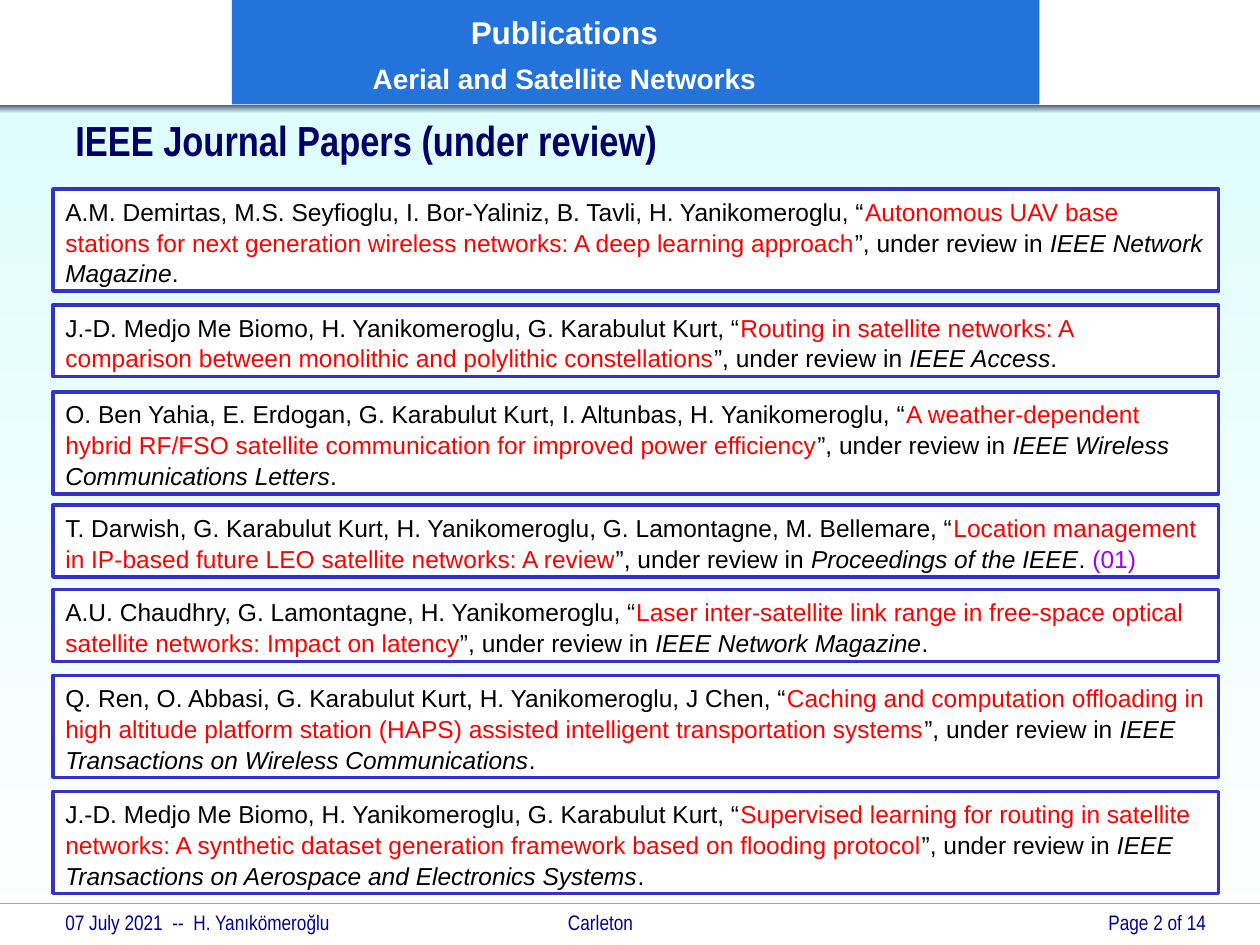
from lxml.etree import SubElement
from pptx import Presentation
from pptx.dml.color import RGBColor
from pptx.enum.shapes import MSO_CONNECTOR, MSO_SHAPE
from pptx.enum.text import MSO_ANCHOR, PP_ALIGN
from pptx.oxml.ns import qn
from pptx.util import Inches, Pt

# Content
HEADER = [("Publications", 18), ("Aerial and Satellite Networks", 16)]
TITLE = "IEEE Journal Papers (under review)"
# left, width, text, alignment
FOOTER = [
    (0.42, 3.5, "07 July 2021  --  H. Yanıkömeroğlu", PP_ALIGN.LEFT),
    (4.41, 2, "Carleton", PP_ALIGN.LEFT),
    (7.5, 2.17, "Page 2 of 14", PP_ALIGN.RIGHT),
]
# top, number of lines, authors, paper title, journal, note
PAPERS = [
    (1.5, 3, "A.M. Demirtas, M.S. Seyfioglu, I. Bor-Yaliniz, B. Tavli, H. Yanikomeroglu",
     "Autonomous UAV base stations for next generation wireless networks: "
     "A deep learning approach", "IEEE Network Magazine", ""),
    (2.42, 2, "J.-D. Medjo Me Biomo, H. Yanikomeroglu, G. Karabulut Kurt",
     "Routing in satellite networks: A comparison between monolithic and "
     "polylithic constellations", "IEEE Access", ""),
    (3.11, 3, "O. Ben Yahia, E. Erdogan, G. Karabulut Kurt, I. Altunbas, H. Yanikomeroglu",
     "A weather-dependent hybrid RF/FSO satellite communication for improved "
     "power efficiency", "IEEE Wireless Communications Letters", ""),
    (4.01, 2, "T. Darwish, G. Karabulut Kurt, H. Yanikomeroglu, G. Lamontagne, M. Bellemare",
     "Location management in IP-based future LEO satellite networks: A review",
     "Proceedings of the IEEE", "(01)"),
    (4.68, 2, "A.U. Chaudhry, G. Lamontagne, H. Yanikomeroglu",
     "Laser inter-satellite link range in free-space optical satellite "
     "networks: Impact on latency", "IEEE Network Magazine", ""),
    (5.36, 3, "Q. Ren, O. Abbasi, G. Karabulut Kurt, H. Yanikomeroglu, J Chen",
     "Caching and computation offloading in high altitude platform station "
     "(HAPS) assisted intelligent transportation systems",
     "IEEE Transactions on Wireless Communications", ""),
    (6.28, 3, "J.-D. Medjo Me Biomo, H. Yanikomeroglu, G. Karabulut Kurt",
     "Supervised learning for routing in satellite networks: A synthetic "
     "dataset generation framework based on flooding protocol",
     "IEEE Transactions on Aerospace and Electronics Systems", ""),
]
BOX_HEIGHT = {2: 0.57, 3: 0.81}


def rgb(color):
    return RGBColor.from_string(color)


def set_font(font, name, size, color, bold=False):
    font.name, font.size, font.bold = name, Pt(size), bold
    font.color.rgb = rgb(color)


def add_rect(left, top, width, height, fill, line=None):
    s = slide.shapes.add_shape(MSO_SHAPE.RECTANGLE, Inches(left), Inches(top),
                               Inches(width), Inches(height))
    s.shadow.inherit = False
    if isinstance(fill, tuple):  # top and bottom colours of a gradient
        s.fill.gradient()
        s.fill.gradient_angle = 270
        for stop, color in zip(s.fill.gradient_stops, fill):
            stop.color.rgb = rgb(color)
    else:
        s.fill.solid()
        s.fill.fore_color.rgb = rgb(fill)
    if line:
        s.line.color.rgb = rgb(line)
        s.line.width = Pt(2)
    else:
        s.line.fill.background()
    return s


def add_text(left, top, width, height, text, size, color, bold=False,
             align=PP_ALIGN.LEFT, anchor=MSO_ANCHOR.TOP):
    tf = slide.shapes.add_textbox(Inches(left), Inches(top), Inches(width),
                                  Inches(height)).text_frame
    tf.word_wrap = True
    tf.vertical_anchor = anchor
    p = tf.paragraphs[0]
    p.text, p.alignment = text, align
    set_font(p.font, "Arial Narrow", size, color, bold)


prs = Presentation()
prs.slide_width, prs.slide_height = Inches(10), Inches(7.5)
slide = prs.slides.add_slide(prs.slide_layouts[6])

# Background and footer
add_rect(0, 0.86, 10, 6.64, ("DFFDFD", "FFFFFF"))
rule = slide.shapes.add_connector(MSO_CONNECTOR.STRAIGHT, 0, Inches(7.17),
                                  Inches(10), Inches(7.17))
rule.line.color.rgb = rgb("99CC00")
rule.line.width = Pt(0.75)
SubElement(rule.line._get_or_add_ln().getparent(), qn("a:effectLst"))
for left, width, text, align in FOOTER:
    add_text(left, 7.17, width, 0.3, text, 12, "000099", align=align)

# Header band, its text centred left of the middle
add_rect(0, 0.83, 10, 0.07, ("475577", "DFFDFD"))
tf = add_rect(1.84, 0, 6.41, 0.83, "2473DB").text_frame
tf.vertical_anchor = MSO_ANCHOR.MIDDLE
tf.margin_right = Inches(1.23)
for i, (text, size) in enumerate(HEADER):
    p = tf.add_paragraph() if i else tf.paragraphs[0]
    p.text, p.alignment, p.line_spacing = text, PP_ALIGN.CENTER, 1.1
    if i:
        p.space_before = Pt(4)
    set_font(p.font, "Arial", size, "FFFFFF", True)

# Title
add_text(0.5, 0.9, 8.5, 0.42, TITLE, 24, "000066", True, anchor=MSO_ANCHOR.MIDDLE)

# Papers
for top, lines, authors, paper, journal, note in PAPERS:
    tf = add_rect(0.42, top, 9.25, BOX_HEIGHT[lines], "FFFFFF", "3333CC").text_frame
    tf.word_wrap = True
    tf.vertical_anchor = MSO_ANCHOR.TOP
    p = tf.paragraphs[0]
    p.alignment, p.line_spacing = PP_ALIGN.LEFT, 1.05
    set_font(p.font, "Arial", 14, "000000")
    runs = [(authors + ", “", None), (paper, "FF0000"), ("”, under review in ", None),
            (journal, None), (". " if note else ".", None)]
    if note:
        runs.append((note, "9900FF"))
    for text, color in runs:
        r = p.add_run()
        r.text = text
        if color:
            r.font.color.rgb = rgb(color)
        if text == journal:
            r.font.italic = True

prs.save("out.pptx")
